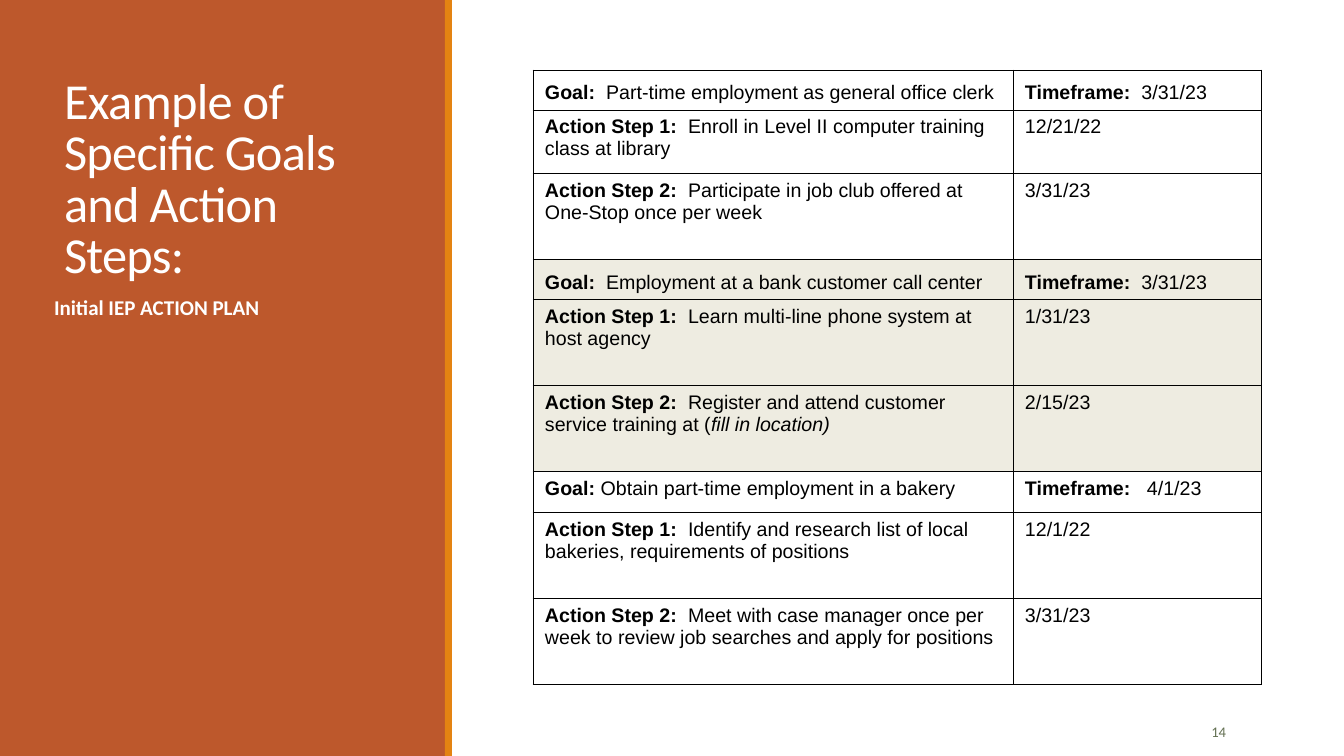
from lxml.etree import SubElement
from pptx import Presentation
from pptx.dml.color import RGBColor
from pptx.enum.shapes import MSO_SHAPE
from pptx.enum.text import MSO_ANCHOR, PP_ALIGN
from pptx.oxml.ns import qn
from pptx.util import Pt

RUST, ORANGE, OLIVE = "BD582C", "E48312", "637052"
WHITE, BLACK, SAND = "FFFFFF", "000000", "EEECE1"

ROWS = [
    (40, WHITE, "Goal:  ", "Part-time employment as general office clerk", "Timeframe:  ", "3/31/23"),
    (64, WHITE, "Action Step 1:  ", "Enroll in Level II computer training class at library", "", "12/21/22"),
    (86, WHITE, "Action Step 2:  ", "Participate in job club offered at One-Stop once per week", "", "3/31/23"),
    (40, SAND, "Goal:  ", "Employment at a bank customer call center", "Timeframe:  ", "3/31/23"),
    (86, SAND, "Action Step 1:  ", "Learn multi-line phone system at host agency", "", "1/31/23"),
    (86, SAND, "Action Step 2:  ", "Register and attend customer service training at (|fill in location)", "", "2/15/23"),
    (41, WHITE, "Goal: ", "Obtain part-time employment in a bakery", "Timeframe:   ", "4/1/23"),
    (86, WHITE, "Action Step 1:  ", "Identify and research list of local bakeries, requirements of positions", "", "12/1/22"),
    (86, WHITE, "Action Step 2:  ", "Meet with case manager once per week to review job searches and apply for positions", "", "3/31/23"),
]
BOTTOM_ROWS = (0, 3)


def px(n):
    """Turn whole pixels into EMU."""
    return round(n * 914400 / 100.8)


def rgb(color):
    """Turn a hex string into a colour."""
    return RGBColor.from_string(color)


def add_run(p, text, font="Calibri", size=14, color=BLACK, bold=False, italic=False, spacing=None):
    """Add one formatted run to a paragraph."""
    r = p.add_run()
    r.text = text
    r.font.name, r.font.size = font, Pt(size)
    r.font.bold, r.font.italic = bold, italic
    r.font.color.rgb = rgb(color)
    if spacing is not None:
        r.font._element.set("spc", str(spacing))


class Deck:
    """Hold the style and the current slide."""

    def __init__(self, width, height):
        """Start a presentation with one blank slide."""
        self.prs = Presentation()
        self.prs.slide_width, self.prs.slide_height = px(width), px(height)
        self.s = self.prs.slides.add_slide(self.prs.slide_layouts[6])

    def rect(self, x, y, w, h, color):
        """Add a plain filled rectangle."""
        sp = self.s.shapes.add_shape(MSO_SHAPE.RECTANGLE, px(x), px(y), px(w), px(h))
        sp.shadow.inherit = False
        sp.fill.solid()
        sp.fill.fore_color.rgb = rgb(color)
        sp.line.fill.background()

    def text(self, x, y, w, h, text, anchor=MSO_ANCHOR.TOP, align=PP_ALIGN.LEFT,
             inset=10, line=1.0, **style):
        """Add a wrapped text box with one paragraph."""
        tf = self.s.shapes.add_textbox(px(x), px(y), px(w), px(h)).text_frame
        tf.word_wrap, tf.vertical_anchor = True, anchor
        tf.margin_left = tf.margin_right = px(inset)
        p = tf.paragraphs[0]
        p.alignment, p.line_spacing = align, line
        add_run(p, text, **style)

    def borders(self, cell):
        """Draw a thin black line on each side of a cell."""
        tcPr = cell._tc.get_or_add_tcPr()
        for i, side in enumerate(("lnL", "lnR", "lnT", "lnB")):
            ln = SubElement(tcPr, qn(f"a:{side}"), w=str(Pt(0.75)))
            fill = SubElement(ln, qn("a:solidFill"))
            SubElement(fill, qn("a:srgbClr"), val=BLACK)
            tcPr.insert(i, ln)

    def cell(self, cell, label, text, color, anchor):
        """Fill a cell with a bold label and text, italic after a bar."""
        cell.fill.solid()
        cell.fill.fore_color.rgb = rgb(color)
        cell.vertical_anchor = anchor
        cell.margin_left = cell.margin_right = px(12)
        cell.margin_top = cell.margin_bottom = px(6)
        p = cell.text_frame.paragraphs[0]
        if label:
            add_run(p, label, font="Arial", bold=True)
        for i, part in enumerate(text.split("|")):
            add_run(p, part, font="Arial", italic=i > 0)
        self.borders(cell)

    def table(self, x, y, widths, rows):
        """Add the table of goals, steps and dates."""
        height = sum(row[0] for row in rows)
        table = self.s.shapes.add_table(len(rows), len(widths), px(x), px(y),
                                        px(sum(widths)), px(height)).table
        table.first_row = table.horz_banding = False
        for column, width in zip(table.columns, widths):
            column.width = px(width)
        for i, (row_height, color, label, text, date_label, date) in enumerate(rows):
            table.rows[i].height = px(row_height)
            anchor = MSO_ANCHOR.BOTTOM if i in BOTTOM_ROWS else MSO_ANCHOR.TOP
            self.cell(table.cell(i, 0), label, text, color, anchor)
            self.cell(table.cell(i, 1), date_label, date, color, anchor)


def main():
    """Build the slide and save it."""
    deck = Deck(1344, 756)
    deck.rect(0, 0, 446, 756, RUST)
    deck.text(54, 57, 340, 232, "Example of Specific Goals and Action Steps:",
              anchor=MSO_ANCHOR.BOTTOM, line=0.85, size=36, color=WHITE, spacing=-50)
    deck.text(54, 292, 340, 368, "Initial IEP ACTION PLAN", inset=0, line=0.9,
              size=15, color=WHITE, bold=True)
    deck.rect(445, 0, 7, 756, ORANGE)
    deck.text(1092, 712, 144, 40, "14", anchor=MSO_ANCHOR.MIDDLE, align=PP_ALIGN.RIGHT,
              size=10.5, color=OLIVE)
    deck.table(533, 70, (480, 248), ROWS)
    deck.prs.save("out.pptx")


if __name__ == "__main__":
    main()
